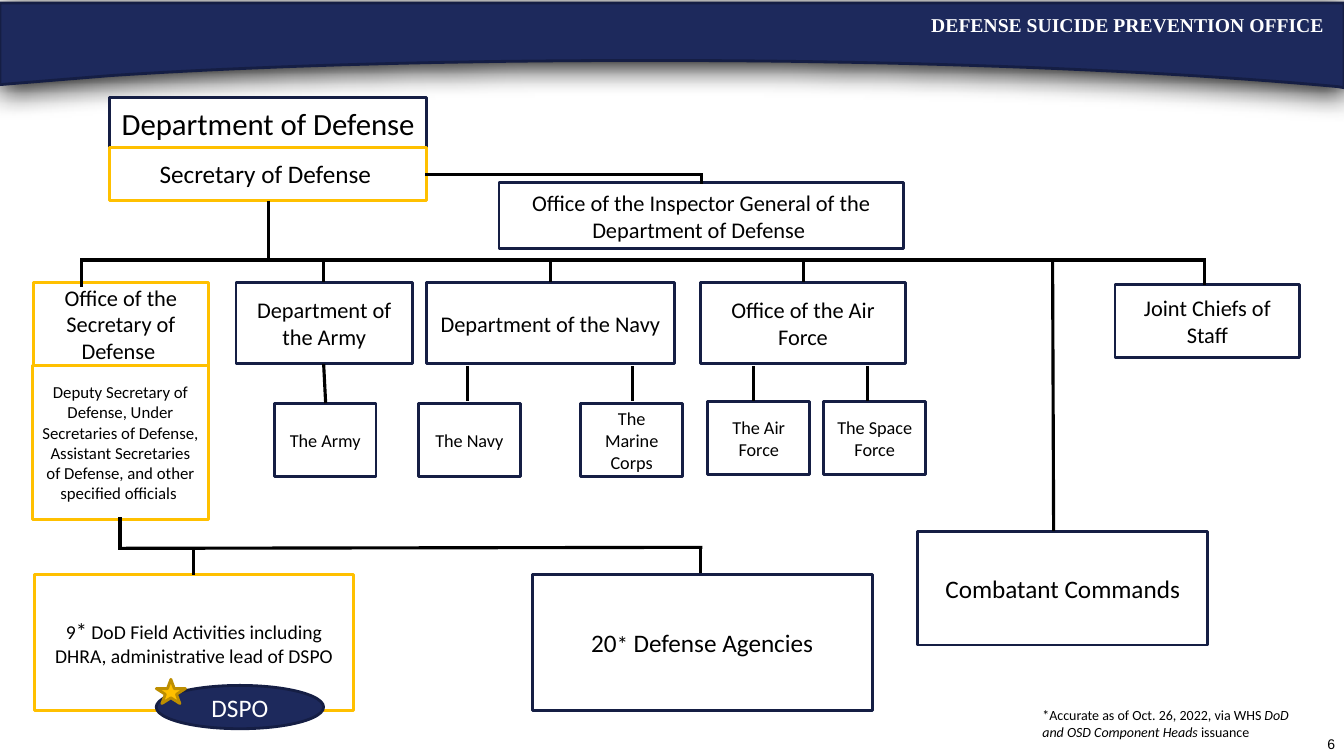
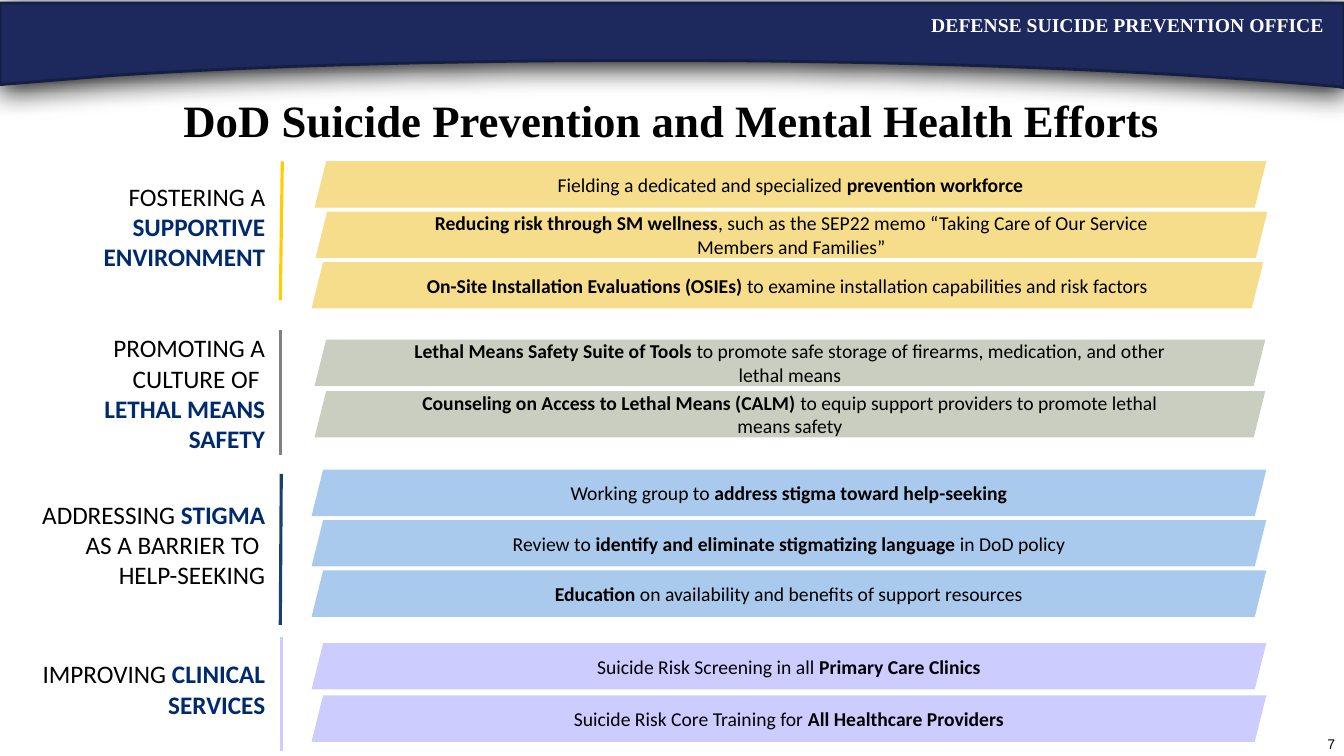
from itertools import pairwise

from lxml import etree
from pptx import Presentation
from pptx.dml.color import RGBColor
from pptx.enum.shapes import MSO_CONNECTOR, MSO_SHAPE
from pptx.enum.text import MSO_ANCHOR, PP_ALIGN
from pptx.oxml.ns import qn
from pptx.util import Inches, Pt

LEFT, CENTER, RIGHT = PP_ALIGN.LEFT, PP_ALIGN.CENTER, PP_ALIGN.RIGHT
TOP, MIDDLE = MSO_ANCHOR.TOP, MSO_ANCHOR.MIDDLE
STRAIGHT = MSO_CONNECTOR.STRAIGHT
PROCESS, PARALLELOGRAM = MSO_SHAPE.FLOWCHART_PROCESS, MSO_SHAPE.PARALLELOGRAM
OVAL, STAR = MSO_SHAPE.OVAL, MSO_SHAPE.STAR_5_POINT

COLORS = {
    "white": "FFFFFF", "black": "000000", "navy": "1D295C", "outline": "151E44",
    "gold": "FFC000", "dark gold": "BD8E00", "label": "002A6E",
    "yellow rule": "FFCD00", "yellow": "F6DD8B", "grey rule": "808080", "sage": "CACEC1",
    "blue rule": "17406D", "blue": "A9C9ED", "lilac": "CCCCFF",
}
SERIF = "Times New Roman"
BOLD = {"bold": True}
KEY = {"bold": True, "color": "label"}

# Organization chart: text, left, top, width, height, size, outline
TIER, BRANCH = 2.8, 0.81
SERVICE_W, SERVICE_H = 1.01, 0.73
BOXES = [
    ("Department of Defense", 1.09, 0.97, 3.14, 0.5, 22, "outline"),
    ("Secretary of Defense ", 1.09, 1.46, 3.14, 0.53, 18, "gold"),
    ("Office of the Inspector General of the Department of Defense ",
     4.95, 1.81, 4.01, 0.66, 16, "outline"),
    ("Office of the Secretary of Defense ", 0.33, TIER, 1.74, 0.83, 16, "gold"),
    ("Deputy Secretary of Defense, Under Secretaries of Defense, Assistant Secretaries "
     "of Defense, and other specified officials ", 0.32, 3.63, 1.75, 1.52, 12, "gold"),
    ("Department of the Army", 2.34, TIER, 1.75, BRANCH, 16, "outline"),
    ("Department of the Navy", 4.23, TIER, 2.46, BRANCH, 16, "outline"),
    ("Office of the Air Force", 6.95, TIER, 2.03, BRANCH, 16, "outline"),
    ("Joint Chiefs of Staff", 11.06, 2.82, 1.83, 0.73, 16, "outline"),
    ("Combatant Commands", 9.1, 5.27, 2.88, 1.13, 18, "outline"),
    (["9", ("*", {"size": 16}), " DoD Field Activities including DHRA, administrative lead of DSPO"],
     0.34, 5.7, 3.17, 1.35, 14, "gold"),
    (["20", ("*", {"size": 16}), " Defense Agencies"], 5.28, 5.7, 3.37, 1.35, 18, "outline"),
]
SERVICES = [
    ("The Army", 2.72, 4), ("The Navy", 4.15, 4), ("The Marine Corps", 5.76, 4),
    ("The Air Force", 7.02, 3.98), ("The Space Force", 8.17, 3.98),
]
BOXES += [(name, x, y, SERVICE_W, SERVICE_H, 13, "outline") for name, x, y in SERVICES]
ROUTES = [
    [(0.81, 2.83), (0.81, 2.58), (11.95, 2.58), (11.95, 2.81)],
    [(4.23, 1.73), (6.96, 1.73), (6.96, 1.81)],
    [(2.66, 1.99), (2.66, 2.56)],
    *[[(x, 2.56), (x, TIER)] for x in (3.21, 5.46, 7.97)],
    [(10.44, 2.6), (10.45, 5.27)],
    [(3.21, 3.61), (3.23, 4)],
    *[[(x, 3.63), (x, 3.98)] for x in (4.64, 6.27, 7.47, 8.6)],
    [(1.19, 5.14), (1.19, 5.44), (6.95, 5.43), (6.95, 5.67)],
    [(1.92, 5.44), (1.92, 5.7)],
]
FOOTNOTE = ["*Accurate as of Oct. 26, 2022, via WHS ",
            ("DoD and OSD Component Heads ", {"italic": True}), "issuance"]

# Efforts: each bar is (left, runs)
LABEL_RIGHT, BAR_H = 2.68, 0.46
EFFORTS = [
    {"label": [["FOSTERING A ", ("SUPPORTIVE ENVIRONMENT", KEY)]],
     "label_box": (0.28, 1.73, 1.03), "rule": [(2.8, 1.6), (2.78, 2.98)],
     "rule_color": "yellow rule", "fill": "yellow", "top": 1.6, "pitch": 0.5, "width": 9.44,
     "bars": [
         (3.12, ["Fielding a dedicated and specialized ", ("prevention workforce", BOLD)]),
         (3.13, [("Reducing risk through SM wellness", BOLD),
                 ", such as the SEP22 memo “Taking Care of Our Service Members and Families”"]),
         (3.09, [("On-Site Installation Evaluations (OSIEs) ", BOLD),
                 "to examine installation capabilities and risk factors"])]},
    {"label": [["PROMOTING A CULTURE OF "], [("LETHAL MEANS SAFETY", KEY)]],
     "label_box": (0.28, 3.33, 1.14), "rule": [(2.78, 3.27), (2.78, 4.51)],
     "rule_color": "grey rule", "fill": "sage", "top": 3.37, "pitch": 0.51, "width": 9.43,
     "bars": [
         (3.12, [("Lethal Means Safety Suite of Tools ", BOLD),
                 "to promote safe storage of firearms, medication, and other lethal means"]),
         (3.12, [("Counseling on Access to Lethal Means (CALM) ", BOLD),
                 "to equip support providers to promote lethal means safety"])]},
    {"label": [["ADDRESSING ", ("STIGMA ", KEY), "AS A BARRIER TO "], ["HELP-SEEKING"]],
     "label_box": (0.35, 4.73, 1.34), "rule": [(2.79, 4.7), (2.78, 6.2)],
     "rule_color": "blue rule", "fill": "blue", "top": 4.66, "pitch": 0.5, "width": 9.47,
     "bars": [
         (3.09, ["Working group to ", ("address stigma toward help-seeking", BOLD)]),
         (3.09, ["Review to ", ("identify and eliminate stigmatizing language ", BOLD),
                 "in DoD policy"]),
         (3.09, [("Education", BOLD), " on availability and benefits of support resources"])]},
    {"label": [["IMPROVING ", ("CLINICAL SERVICES", KEY)]],
     "label_box": (0.24, 6.32, 1.03), "rule": [(2.79, 6.32), (2.79, 7.45)],
     "rule_color": "lilac", "fill": "lilac", "top": 6.38, "pitch": 0.52, "width": 9.47,
     "bars": [
         (3.09, ["Suicide Risk Screening in all ", ("Primary Care Clinics", BOLD)]),
         (3.09, ["Suicide Risk Core Training for ", ("All Healthcare Providers", BOLD)])]},
]


def rgb(name):
    return RGBColor.from_string(COLORS[name])


def write(shape, paragraphs, size, align=CENTER, anchor=MIDDLE, inset=None, **base):
    """Fill a shape with paragraphs; each is a list of strings or (string, format) runs."""
    tf = shape.text_frame
    tf.word_wrap, tf.vertical_anchor = True, anchor
    if inset is not None:
        for side in ("left", "right", "top", "bottom"):
            setattr(tf, f"margin_{side}", Inches(inset))
    for i, runs in enumerate(paragraphs):
        p = tf.paragraphs[0] if i == 0 else tf.add_paragraph()
        p.alignment = align
        for run in runs:
            text, extra = (run, {}) if isinstance(run, str) else run
            fmt = {"name": "Calibri", "size": size, "color": "black", **base, **extra}
            r = p.add_run()
            r.text = text
            r.font.color.rgb = rgb(fmt.pop("color"))
            fmt["size"] = Pt(fmt["size"])
            for key, value in fmt.items():
                setattr(r.font, key, value)


def paint(shape, fill, line=None):
    shape.shadow.inherit = False
    shape.fill.solid()
    shape.fill.fore_color.rgb = rgb(fill)
    if line:
        shape.line.color.rgb = rgb(line)
        shape.line.width = Pt(2)
    else:
        shape.line.fill.background()


def add_shape(s, kind, box, fill, line=None):
    sp = s.shapes.add_shape(kind, *map(Inches, box))
    paint(sp, fill, line)
    return sp


def add_text(s, box, paragraphs, size, **style):
    write(s.shapes.add_textbox(*map(Inches, box)), paragraphs, size, **style)


def add_route(s, points, color="black"):
    """Join the points with straight connectors."""
    for start, end in pairwise(points):
        line = s.shapes.add_connector(STRAIGHT, *map(Inches, start + end))
        line.line.color.rgb = rgb(color)
        line.line.width = Pt(2.25)
        if len(points) > 2:
            line.line._get_or_add_ln().set("cap", "sq")
        etree.SubElement(line._element.spPr, qn("a:effectLst"))


def curve(p0, p1, p2, p3, steps=24):
    """Points along a cubic Bezier curve, without its start."""
    for i in range(1, steps + 1):
        t = i / steps
        weights = ((1 - t) ** 3, 3 * t * (1 - t) ** 2, 3 * t * t * (1 - t), t ** 3)
        yield tuple(sum(w * c for w, c in zip(weights, axis)) for axis in zip(p0, p1, p2, p3))


def add_band(s):
    outline = [(0, 0.03), (13.33, 0.03), (13.33, 0.87), (13.27, 0.86),
               *curve((13.27, 0.86), (11.53, 0.7), (9.13, 0.6), (6.47, 0.6)),
               *curve((6.47, 0.6), (4.48, 0.6), (2.63, 0.65), (1.1, 0.75)), (0, 0.84)]
    points = [(Inches(x), Inches(y)) for x, y in outline]
    builder = s.shapes.build_freeform(*points[0])
    builder.add_line_segments(points[1:], close=True)
    band = builder.convert_to_shape()
    paint(band, "navy", "outline")
    effects = band._element.spPr.find(qn("a:effectLst"))
    shadow = etree.SubElement(effects, qn("a:outerShdw"), blurRad=str(Pt(20)),
                              dist=str(Pt(3)), dir="5400000", algn="t", rotWithShape="0")
    color = etree.SubElement(shadow, qn("a:srgbClr"), val=COLORS["black"])
    etree.SubElement(color, qn("a:alpha"), val="93000")


def add_slide(prs, number):
    s = prs.slides.add_slide(prs.slide_layouts[6])
    add_band(s)
    add_text(s, (4.56, 0.08, 8.67, 0.34), [["DEFENSE SUICIDE PREVENTION OFFICE"]], 14,
             align=RIGHT, anchor=TOP, name=SERIF, color="white", bold=True)
    add_text(s, (12.56, 7.25, 0.78, 0.4), [[str(number)]], 10,
             align=RIGHT, anchor=TOP, name="Arial")
    return s


def organization_slide(prs):
    s = add_slide(prs, 6)
    for text, x, y, w, h, size, line in BOXES:
        runs = [text] if isinstance(text, str) else text
        write(add_shape(s, PROCESS, (x, y, w, h), "white", line), [runs], size)
    for points in ROUTES:
        add_route(s, points)
    write(add_shape(s, OVAL, (1.55, 6.8, 1.66, 0.43), "navy", "outline"),
          [["DSPO"]], 18, color="white")
    add_shape(s, STAR, (1.55, 6.74, 0.29, 0.24), "gold", "dark gold")
    add_text(s, (10.24, 6.96, 2.88, 0.44), [FOOTNOTE], 10, align=LEFT, anchor=TOP)


def efforts_slide(prs):
    s = add_slide(prs, 7)
    add_text(s, (1.44, 0.73, 10.44, 0.92),
             [["DoD Suicide Prevention and Mental Health Efforts"]], 32, name=SERIF, bold=True)
    for group in EFFORTS:
        x, y, h = group["label_box"]
        add_text(s, (x, y, LABEL_RIGHT - x, h), group["label"], 18, align=RIGHT, inset=0.05)
        add_route(s, group["rule"], group["rule_color"])
        for i, (left, runs) in enumerate(group["bars"]):
            box = (left, group["top"] + i * group["pitch"], group["width"], BAR_H)
            write(add_shape(s, PARALLELOGRAM, box, group["fill"]), [runs], 14, inset=0.05)


def main():
    prs = Presentation()
    prs.slide_width, prs.slide_height = Inches(13.33), Inches(7.5)
    organization_slide(prs)
    efforts_slide(prs)
    prs.save("out.pptx")


if __name__ == "__main__":
    main()
